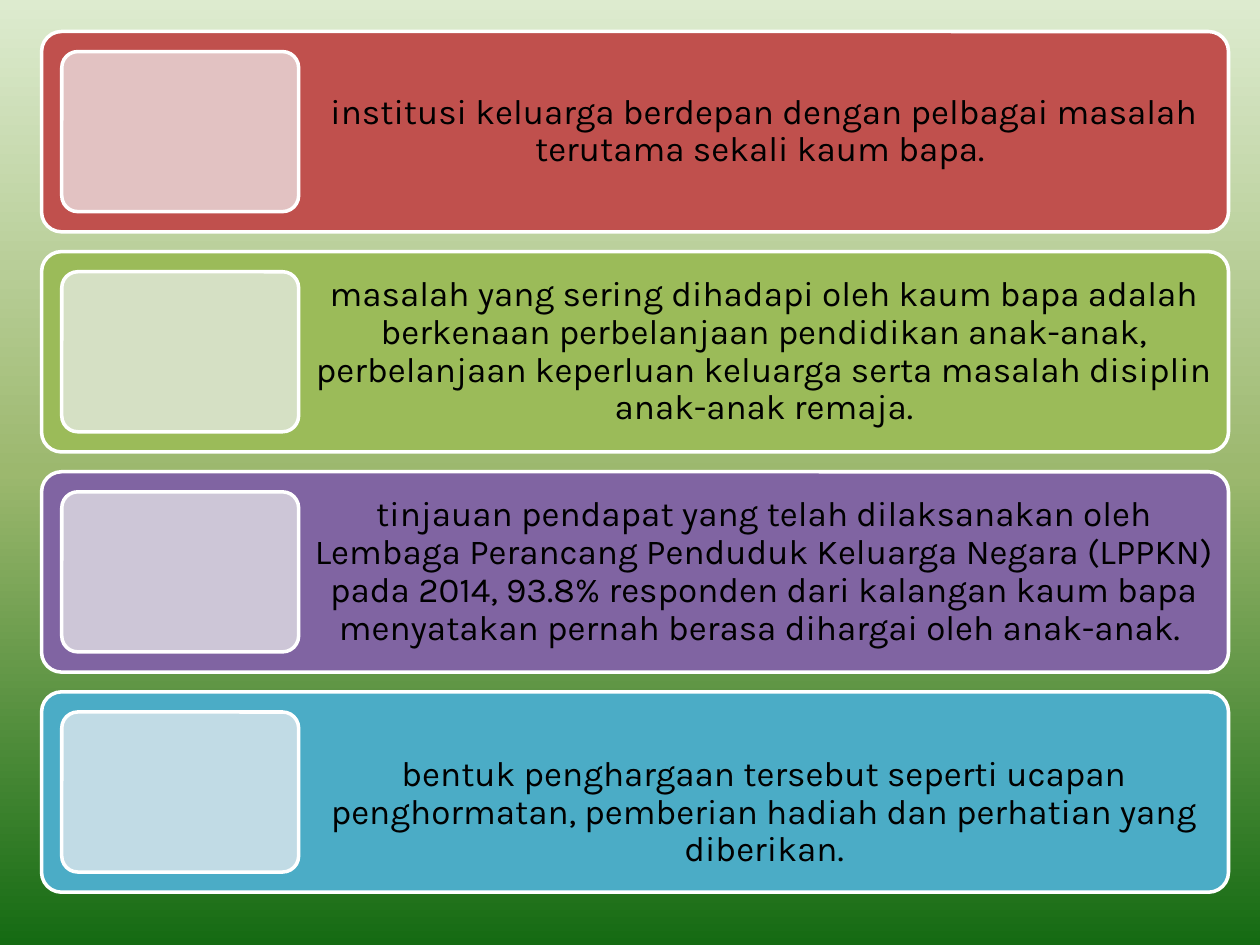
from copy import deepcopy

from pptx import Presentation
from pptx.dml.color import RGBColor
from pptx.enum.shapes import MSO_SHAPE
from pptx.enum.text import MSO_ANCHOR, PP_ALIGN
from pptx.oxml.ns import qn
from pptx.util import Inches, Pt

WHITE = RGBColor(0xFF, 0xFF, 0xFF)
BLACK = RGBColor(0x00, 0x00, 0x00)
RED, PALE_RED = RGBColor(0xC0, 0x50, 0x4D), RGBColor(0xE2, 0xC2, 0xC2)
GREEN, PALE_GREEN = RGBColor(0x9B, 0xBB, 0x59), RGBColor(0xD5, 0xE0, 0xC4)
PURPLE, PALE_PURPLE = RGBColor(0x80, 0x64, 0xA2), RGBColor(0xCD, 0xC6, 0xD7)
BLUE, PALE_BLUE = RGBColor(0x4B, 0xAC, 0xC6), RGBColor(0xC1, 0xDB, 0xE5)
BACKGROUND = [
    (0, RGBColor(0xDD, 0xEB, 0xCF)),
    (0.5, RGBColor(0x9C, 0xB8, 0x6E)),
    (1, RGBColor(0x15, 0x6B, 0x13)),
]

# Row colour, panel colour, text, anchor, top inset
ROWS = [
    (RED, PALE_RED,
     "institusi keluarga berdepan dengan pelbagai masalah terutama sekali "
     "kaum bapa. ", MSO_ANCHOR.MIDDLE, 0.08),
    (GREEN, PALE_GREEN,
     "masalah yang sering dihadapi oleh kaum bapa adalah berkenaan "
     "perbelanjaan pendidikan anak-anak, perbelanjaan keperluan keluarga "
     "serta masalah disiplin anak-anak remaja.", MSO_ANCHOR.MIDDLE, 0.08),
    (PURPLE, PALE_PURPLE,
     "tinjauan pendapat yang telah dilaksanakan oleh Lembaga Perancang "
     "Penduduk Keluarga Negara (LPPKN) pada 2014, 93.8% responden dari "
     "kalangan kaum bapa menyatakan pernah berasa dihargai oleh anak-anak. ",
     MSO_ANCHOR.MIDDLE, 0.08),
    (BLUE, PALE_BLUE,
     "bentuk penghargaan tersebut seperti ucapan penghormatan, pemberian "
     "hadiah dan perhatian yang diberikan.", MSO_ANCHOR.TOP, 0.51),
]
LEFT, TOP, WIDTH, HEIGHT = 0.33, 0.25, 9.42, 1.59
PITCH = 1.747
PAD = 0.16
TEXT_LEFT, TEXT_WIDTH = 2.38, 7.37


def add_box(s, x, y, w, h, color):
    box = s.shapes.add_shape(MSO_SHAPE.ROUNDED_RECTANGLE,
                             Inches(x), Inches(y), Inches(w), Inches(h))
    box.adjustments[0] = 0.1
    box.shadow.inherit = False
    box.fill.solid()
    box.fill.fore_color.rgb = color
    box.line.color.rgb = WHITE
    box.line.width = Pt(2)


prs = Presentation()
prs.slide_width, prs.slide_height = Inches(10), Inches(7.5)
s = prs.slides.add_slide(prs.slide_layouts[6])

# Background gradient, top to bottom, with a third stop
fill = s.background.fill
fill.gradient()
fill.gradient_angle = 270
stops = s.element.find(".//" + qn("a:gsLst"))
stops.insert(1, deepcopy(stops[0]))
for stop, (position, color) in zip(fill.gradient_stops, BACKGROUND):
    stop.position = position
    stop.color.rgb = color

# Rows: coloured bar, text, pale panel
for i, (color, pale, text, anchor, inset_top) in enumerate(ROWS):
    y = TOP + i * PITCH
    add_box(s, LEFT, y, WIDTH, HEIGHT, color)

    tb = s.shapes.add_textbox(Inches(TEXT_LEFT), Inches(y),
                              Inches(TEXT_WIDTH), Inches(HEIGHT))
    tf = tb.text_frame
    tf.word_wrap = True
    tf.vertical_anchor = anchor
    tf.margin_left = tf.margin_right = tf.margin_bottom = Inches(0.08)
    tf.margin_top = Inches(inset_top)
    p = tf.paragraphs[0]
    p.alignment = PP_ALIGN.CENTER
    p.line_spacing = 0.9
    r = p.add_run()
    r.text = text
    r.font.name = "Karla"
    r.font.size = Pt(20)
    r.font.color.rgb = BLACK

    add_box(s, LEFT + PAD, y + PAD, 1.88, HEIGHT - 2 * PAD, pale)

prs.save("out.pptx")
